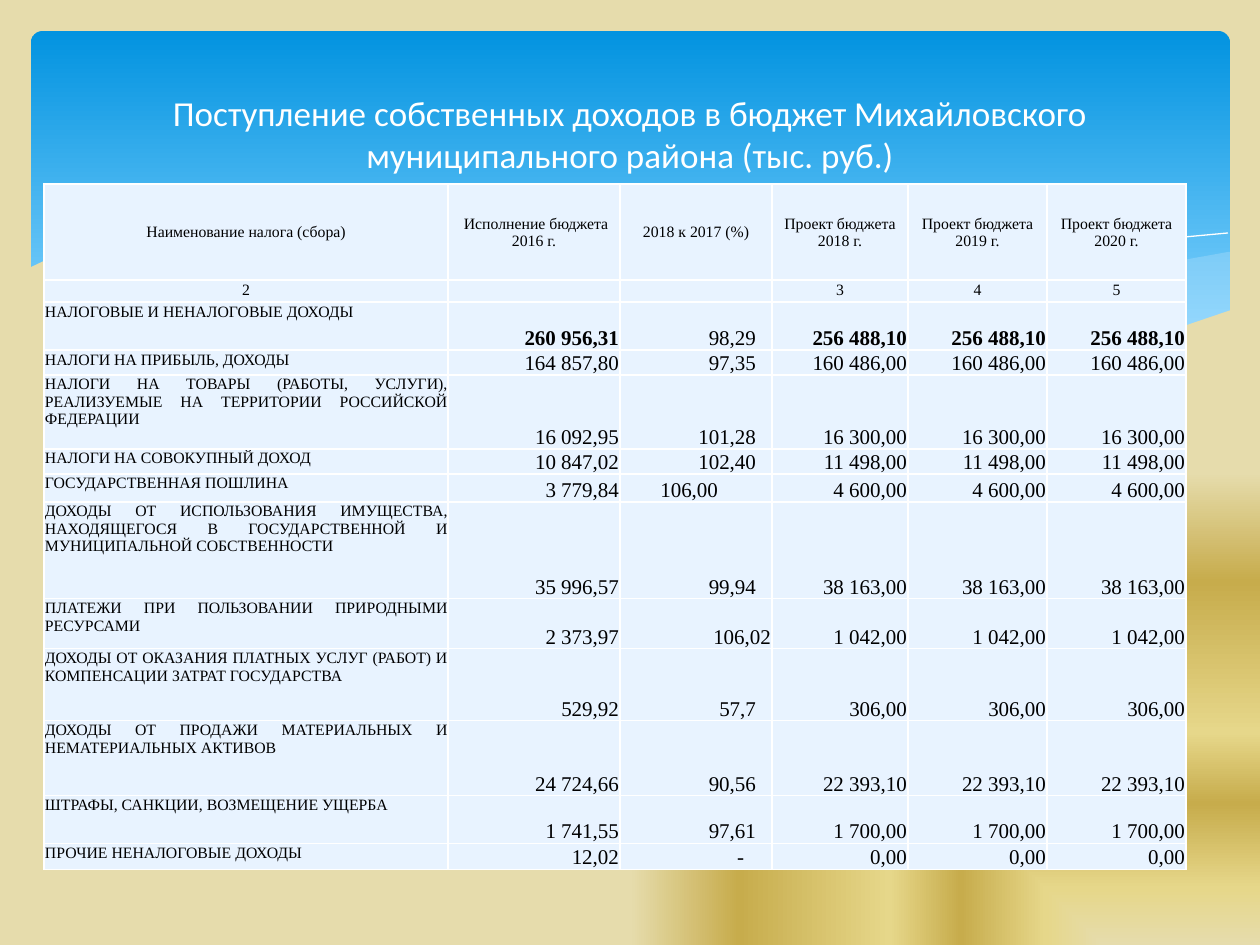
from dataclasses import dataclass

from lxml import etree
from pptx import Presentation
from pptx import util as u
from pptx.dml.color import RGBColor
from pptx.enum import shapes, text
from pptx.oxml import parse_xml
from pptx.oxml.ns import nsdecls, qn

PX = 914400 / 126


@dataclass(frozen=True)
class Theme:
    white: str = "FFFFFF"
    ink: str = "000000"
    cell: str = "E8F3FF"
    glaze: str = "C6E7FC"
    sky: tuple = ((0, "0293E0"), (90, "83D3FE"))
    gold: tuple = ((0, "E6DCAC"), (12, "E6D78A"), (30, "C7AC4C"),
                   (45, "E6D78A"), (77, "C7AC4C"), (100, "E6DCAC"))
    head: str = "Calibri"
    body: str = "Times New Roman"
    big: int = 20
    mid: int = 12
    small: int = 9


DOWN = '<a:lin ang="5400000" scaled="0"/>'
CORNER = '<a:path path="rect"><a:fillToRect l="100000" t="100000"/></a:path>'
LEFT, RIGHT = text.PP_ALIGN.JUSTIFY, text.PP_ALIGN.RIGHT
MID = text.PP_ALIGN.CENTER
TOP, CORE, LOW = (text.MSO_ANCHOR.TOP, text.MSO_ANCHOR.MIDDLE,
                  text.MSO_ANCHOR.BOTTOM)


def emu(px):
    return u.Emu(round(px * PX))


def rgb(code):
    return RGBColor.from_string(code)


def blend(owner, stops, way):
    """Turn the first solid fill under owner into a gradient."""
    marks = "".join(f'<a:gs pos="{at * 1000}"><a:srgbClr val="{code}"/></a:gs>'
                    for at, code in stops)
    old = next(owner.iter(qn("a:solidFill")))
    old.getparent().replace(old, parse_xml(
        f'<a:gradFill {nsdecls("a")} rotWithShape="1">'
        f'<a:gsLst>{marks}</a:gsLst>{way}</a:gradFill>'))


class Deck:
    def __init__(self, theme):
        self.theme = theme
        self.file = Presentation()
        self.file.slide_width, self.file.slide_height = emu(1260), emu(945)
        self.slide = self.file.slides.add_slide(self.file.slide_layouts[5])

    def back(self):
        self.slide.background.fill.solid()
        self.slide.background.fill.fore_color.rgb = rgb(self.theme.white)
        blend(self.slide.element, self.theme.gold, CORNER)

    def panel(self, x, y, w, h):
        box = self.slide.shapes.add_shape(
            shapes.MSO_SHAPE.ROUNDED_RECTANGLE, *map(emu, (x, y, w, h)))
        box.adjustments[0] = 0.034
        box.shadow.inherit = False
        box.line.fill.background()
        box.fill.solid()
        box.fill.fore_color.rgb = rgb(self.theme.white)
        blend(box.element, self.theme.sky, DOWN)

    def curve(self, dots, close=True):
        pen = self.slide.shapes.build_freeform(*dots[0], scale=PX)
        pen.add_line_segments(dots[1:], close=close)
        form = pen.convert_to_shape()
        form.shadow.inherit = False
        return form

    def wave(self, dots, alpha):
        form = self.curve(dots)
        form.line.fill.background()
        form.fill.solid()
        form.fill.fore_color.rgb = rgb(self.theme.glaze)
        tone = next(form.element.iter(qn("a:srgbClr")))
        etree.SubElement(tone, qn("a:alpha"), val=str(alpha * 1000))

    def thread(self, dots):
        form = self.curve(dots, close=False)
        form.fill.background()
        form.line.color.rgb = rgb(self.theme.white)
        form.line.width = u.Pt(0)

    def mask(self, dots):
        """Cover what lies behind with the slide background."""
        form = self.curve(dots)
        form.line.fill.background()
        form.element.remove(form.element.find(qn("p:style")))
        form.element.set("useBgFill", "1")

    def add_run(self, para, words, size, font, tone, bold=False):
        run = para.add_run()
        run.text = words
        run.font.size, run.font.name = u.Pt(size), font
        run.font.bold = bold
        run.font.color.rgb = rgb(tone)

    def title(self, words, x, y, w, h):
        box = self.slide.shapes.title
        box.left, box.top, box.width, box.height = map(emu, (x, y, w, h))
        frame = box.text_frame
        frame.word_wrap, frame.vertical_anchor = True, CORE
        para = frame.paragraphs[0]
        para.alignment = MID
        self.add_run(para, words, self.theme.big, self.theme.head,
                     self.theme.white)
        self.slide.shapes.element.append(box.element)

    def grid(self, x, y, cols, rows):
        frame = self.slide.shapes.add_table(
            len(rows), len(cols), *map(emu, (x, y, sum(cols), sum(rows))))
        table = frame.table
        table.first_row = table.horz_banding = False
        for col, wide in zip(table.columns, cols):
            col.width = emu(wide)
        for row, high in zip(table.rows, rows):
            row.height = emu(high)
        return table

    def cell(self, cell, words, size, align, anchor, bold=False, pad=1):
        cell.margin_left = cell.margin_top = emu(1)
        cell.margin_right, cell.margin_bottom = emu(pad), 0
        cell.vertical_anchor = anchor
        cell.fill.solid()
        cell.fill.fore_color.rgb = rgb(self.theme.cell)
        for spot, side in enumerate("LRTB"):
            cell._tc.tcPr.insert(spot, parse_xml(
                f'<a:ln{side} {nsdecls("a")} w="12700"><a:solidFill>'
                f'<a:srgbClr val="{self.theme.white}"/></a:solidFill>'
                f'</a:ln{side}>'))
        para = cell.text_frame.paragraphs[0]
        para.alignment = align
        if words:
            self.add_run(para, words, size, self.theme.body, self.theme.ink,
                         bold)
        else:
            etree.SubElement(para._p, qn("a:endParaRPr"), sz=str(size * 100))


HEADS = ("Наименование налога (сбора)", " Исполнение бюджета 2016 г.",
         "2018 к 2017 (%)", "Проект бюджета 2018 г.",
         "Проект бюджета 2019 г.", "Проект бюджета 2020 г.")
MARKS = ("2", "", "", "3", "4", "5")
# name, result of 2016, percent, right margin of percent, yearly plan
TAXES = (
    ("НАЛОГОВЫЕ И НЕНАЛОГОВЫЕ ДОХОДЫ", "260 956,31", "98,29", 16, "256 488,10"),
    ("НАЛОГИ НА ПРИБЫЛЬ, ДОХОДЫ", "164 857,80", "97,35", 16, "160 486,00"),
    ("НАЛОГИ НА ТОВАРЫ (РАБОТЫ, УСЛУГИ), РЕАЛИЗУЕМЫЕ НА ТЕРРИТОРИИ "
     "РОССИЙСКОЙ ФЕДЕРАЦИИ", "16 092,95", "101,28", 16, "16 300,00"),
    ("НАЛОГИ НА СОВОКУПНЫЙ ДОХОД", "10 847,02", "102,40", 16, "11 498,00"),
    ("ГОСУДАРСТВЕННАЯ ПОШЛИНА", "3 779,84", "106,00", 54, "4 600,00"),
    ("ДОХОДЫ ОТ ИСПОЛЬЗОВАНИЯ ИМУЩЕСТВА, НАХОДЯЩЕГОСЯ В ГОСУДАРСТВЕННОЙ И "
     "МУНИЦИПАЛЬНОЙ СОБСТВЕННОСТИ", "35 996,57", "99,94", 16, "38 163,00"),
    ("ПЛАТЕЖИ ПРИ ПОЛЬЗОВАНИИ ПРИРОДНЫМИ РЕСУРСАМИ", "2 373,97", "106,02", 1,
     "1 042,00"),
    ("ДОХОДЫ ОТ ОКАЗАНИЯ ПЛАТНЫХ УСЛУГ (РАБОТ) И КОМПЕНСАЦИИ ЗАТРАТ "
     "ГОСУДАРСТВА", "529,92", "57,7", 16, "306,00"),
    ("ДОХОДЫ ОТ ПРОДАЖИ МАТЕРИАЛЬНЫХ И НЕМАТЕРИАЛЬНЫХ АКТИВОВ", "24 724,66",
     "90,56", 16, "22 393,10"),
    ("ШТРАФЫ, САНКЦИИ, ВОЗМЕЩЕНИЕ УЩЕРБА", "1 741,55", "97,61", 16, "1 700,00"),
    ("ПРОЧИЕ НЕНАЛОГОВЫЕ ДОХОДЫ", "12,02", "-", 28, "0,00"),
)
COLS = (404, 172, 152, 136, 139, 139)
ROWS = (96, 22, 48, 25, 74, 25, 28, 97, 50, 72, 75, 48, 26)

CREST = ((1228, 252), (1178, 261), (1104, 272), (1014, 299), (919, 319),
         (833, 334), (888, 341), (954, 348), (1012, 350), (1076, 348),
         (1130, 340), (1178, 330), (1213, 318), (1230, 311), (1230, 252))
SWELL = ((1125, 344), (1055, 334), (977, 320), (890, 302), (793, 280),
         (717, 262), (648, 249), (586, 241), (529, 236), (455, 233),
         (394, 237), (360, 241), (431, 251), (509, 266), (566, 280),
         (668, 302), (757, 321), (838, 335), (910, 345), (989, 350),
         (1056, 350))
FALL = ((389, 246), (433, 239), (505, 236), (591, 238), (672, 244),
        (766, 257), (876, 276), (1002, 304), (1143, 343))
RISE = ((772, 324), (876, 296), (978, 272), (1091, 251), (1164, 239),
        (1228, 233))
FOOT = ((1231, 310), (1184, 326), (1133, 339), (1071, 346), (1019, 349),
        (937, 345), (842, 334), (760, 320), (667, 301), (563, 277),
        (460, 255), (368, 239), (290, 233), (223, 232), (150, 236),
        (96, 246), (50, 258), (29, 268), (29, 415), (1231, 415))


def main():
    theme = Theme()
    deck = Deck(theme)
    deck.back()
    deck.panel(31, 31, 1199, 340)
    deck.wave(CREST, 29)
    deck.wave(SWELL, 40)
    deck.thread(FALL)
    deck.thread(RISE)
    deck.mask(FOOT)

    table = deck.grid(44, 184, COLS, ROWS)
    for row, (words, anchor) in enumerate(((HEADS, CORE), (MARKS, TOP))):
        for col, word in enumerate(words):
            deck.cell(table.cell(row, col), word, theme.small, MID, anchor)
    for row, (name, done, rate, pad, plan) in enumerate(TAXES, 2):
        deck.cell(table.cell(row, 0), name, theme.small, LEFT, TOP)
        for col, word in enumerate((done, rate, plan, plan, plan), 1):
            deck.cell(table.cell(row, col), word, theme.mid, RIGHT, LOW,
                      bold=row == 2 and col != 2, pad=pad if col == 2 else 1)

    deck.title("Поступление собственных доходов в бюджет Михайловского "
               "муниципального района (тыс. руб.)", 63, 47, 1134, 173)
    deck.file.save("out.pptx")


if __name__ == "__main__":
    main()
